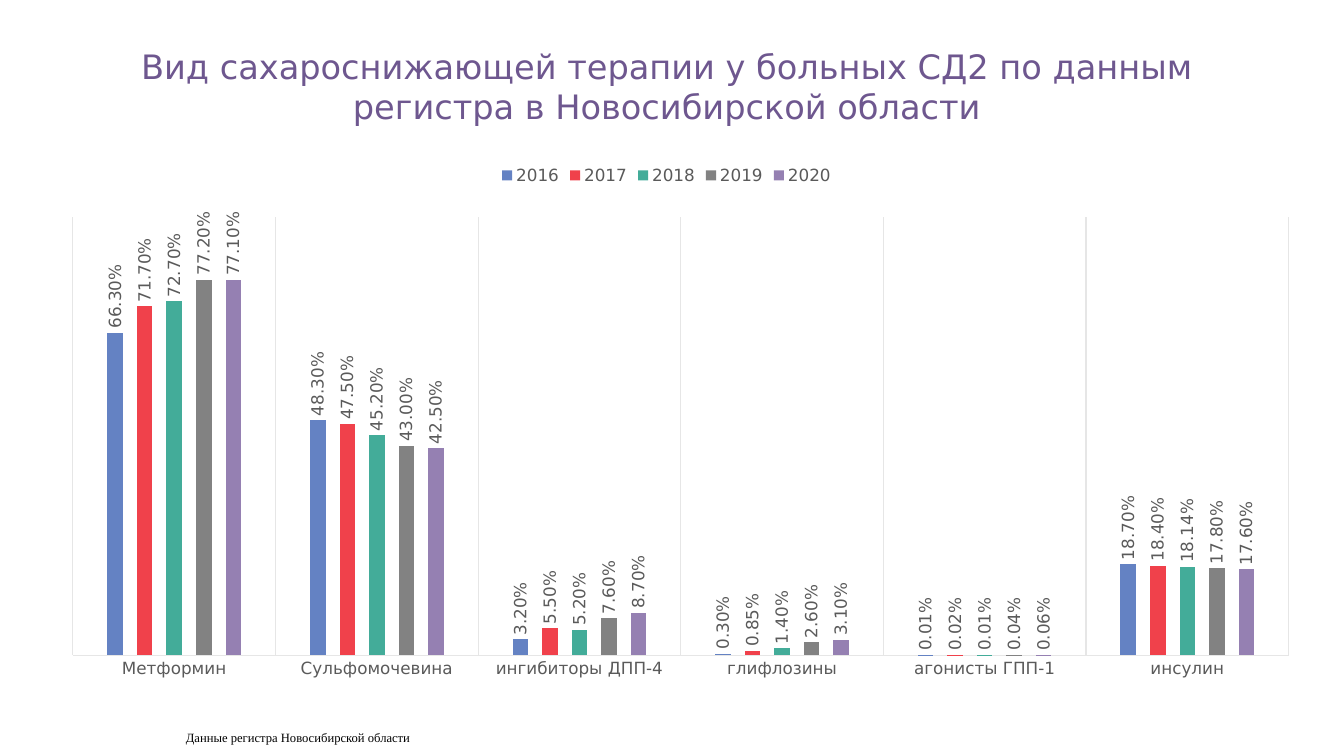
import pptx
import pptx.chart.data
import pptx.dml.color
import pptx.enum.chart
import pptx.enum.text
import pptx.oxml
import pptx.oxml.ns
import pptx.util

PX = 914400 / 100.8
SANS = "DejaVu Sans"
SERIF = "Times New Roman"
COLORS = {
    "title": "6E578F", "label": "5A5A5A", "grid": "E6E6E6", "source": "000000",
    "2016": "6482C3", "2017": "F0414B", "2018": "43AC99", "2019": "828282", "2020": "9580B2",
}
THERAPIES = ["Метформин", "Сульфомочевина", "ингибиторы ДПП-4", "глифлозины", "агонисты ГПП-1", "инсулин"]
SHARES = {
    "2016": [0.663, 0.483, 0.032, 0.003, 0.0001, 0.187],
    "2017": [0.717, 0.475, 0.055, 0.0085, 0.0002, 0.184],
    "2018": [0.727, 0.452, 0.052, 0.014, 0.0001, 0.1814],
    "2019": [0.772, 0.43, 0.076, 0.026, 0.0004, 0.178],
    "2020": [0.771, 0.425, 0.087, 0.031, 0.0006, 0.176],
}


def px(length):
    """Turn pixels into EMU."""
    return pptx.util.Emu(round(length * PX))


def rgb(name):
    """Look up a colour by its name."""
    return pptx.dml.color.RGBColor.from_string(COLORS[name])


def style_font(font, face, size, color):
    """Set the face, size and colour of a font."""
    font.name = face
    font.size = pptx.util.Pt(size)
    font.color.rgb = rgb(color)


def add_text(slide, box, text, face=SANS, size=12, color="label",
             align=pptx.enum.text.PP_ALIGN.LEFT, anchor=pptx.enum.text.MSO_ANCHOR.TOP):
    """Write one wrapped paragraph into a box."""
    frame = slide.shapes.add_textbox(*map(px, box)).text_frame
    frame.word_wrap = True
    frame.vertical_anchor = anchor
    paragraph = frame.paragraphs[0]
    paragraph.alignment = align
    run = paragraph.add_run()
    run.text = text
    style_font(run.font, face, size, color)


def place_plot(chart, x, y, w, h):
    """Fix the inner plot area as fractions of the chart."""
    plot_area = chart.plots[0]._element.getparent()
    for layout in plot_area.findall(pptx.oxml.ns.qn("c:layout")):
        plot_area.remove(layout)
    plot_area.insert(0, pptx.oxml.parse_xml(
        f'<c:layout {pptx.oxml.ns.nsdecls("c")}><c:manualLayout><c:layoutTarget val="inner"/>'
        '<c:xMode val="edge"/><c:yMode val="edge"/>'
        f'<c:x val="{x}"/><c:y val="{y}"/><c:w val="{w}"/><c:h val="{h}"/>'
        '</c:manualLayout></c:layout>'))


def style_axes(chart):
    """Show therapy names between vertical rules and hide the share scale."""
    therapy_axis, share_axis = chart.category_axis, chart.value_axis
    therapy_axis.has_major_gridlines = True
    therapy_axis.major_tick_mark = pptx.enum.chart.XL_TICK_MARK.NONE
    for line in (therapy_axis.format.line, therapy_axis.major_gridlines.format.line):
        line.color.rgb = rgb("grid")
        line.width = pptx.util.Pt(0.75)
    share_axis.has_major_gridlines = False
    share_axis.minimum_scale = 0
    share_axis.maximum_scale = 0.9
    share_axis.visible = False


def style_year(year):
    """Colour the bars of a year and turn their labels upright."""
    year.format.fill.solid()
    year.format.fill.fore_color.rgb = rgb(year.name)
    year.invert_if_negative = False
    labels = year.data_labels
    labels.show_value = True
    labels.number_format = "0.00%"
    labels.number_format_is_linked = False
    labels.position = pptx.enum.chart.XL_LABEL_POSITION.OUTSIDE_END
    style_font(labels.font, SANS, 12, "label")
    body = labels._element.find(".//" + pptx.oxml.ns.qn("a:bodyPr"))
    body.set("rot", "-5400000")
    body.set("vert", "horz")


def add_therapy_chart(slide, box):
    """Draw therapy shares by year as clustered columns."""
    shares = pptx.chart.data.CategoryChartData(number_format="0.00%")
    shares.categories = THERAPIES
    for year, values in SHARES.items():
        shares.add_series(year, values)
    chart = slide.shapes.add_chart(
        pptx.enum.chart.XL_CHART_TYPE.COLUMN_CLUSTERED, *map(px, box), shares).chart
    chart.has_title = False
    style_font(chart.font, SANS, 12, "label")
    chart.has_legend = True
    chart.legend.position = pptx.enum.chart.XL_LEGEND_POSITION.TOP
    chart.legend.include_in_layout = False
    columns = chart.plots[0]
    columns.vary_by_categories = False
    columns.gap_width = 444
    columns.overlap = -90
    for year in columns.series:
        style_year(year)
    style_axes(chart)
    place_plot(chart, 0.024, 0.119, 0.975, 0.823)


def build_therapy_slide(deck, box):
    """Lay out the title, chart and source note in the slide box."""
    left, top, width, height = box
    slide = deck.slides.add_slide(deck.slide_layouts[6])
    add_text(slide, (left + 97, top + 19, width - 204, 134),
             "Вид сахароснижающей терапии у больных СД2 по данным регистра в Новосибирской области",
             size=24, color="title", align=pptx.enum.text.PP_ALIGN.CENTER,
             anchor=pptx.enum.text.MSO_ANCHOR.MIDDLE)
    add_therapy_chart(slide, (left + 43, top + 154, width - 97, height - 224))
    add_text(slide, (left + 176, top + height - 31, 504, 25),
             "Данные регистра Новосибирской области", face=SERIF, size=9, color="source")


def main():
    """Build and save the deck."""
    deck = pptx.Presentation()
    deck.slide_width, deck.slide_height = px(1344), px(756)
    build_therapy_slide(deck, (0, 0, 1344, 756))
    deck.save("out.pptx")


if __name__ == "__main__":
    main()
